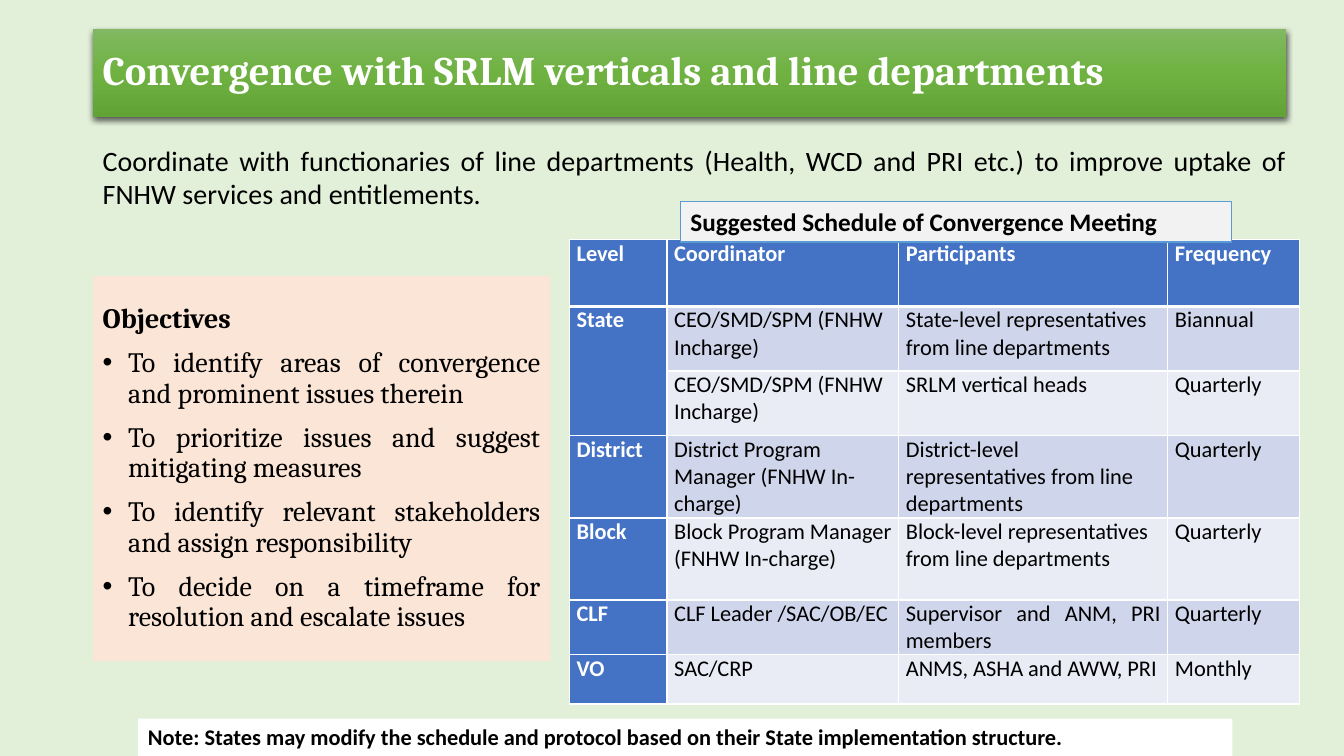
from lxml.etree import SubElement as Sub
from pptx import Presentation
from pptx.dml.color import RGBColor as RGB
from pptx.enum.shapes import MSO_SHAPE as SHAPE
from pptx.enum.text import MSO_ANCHOR as ANCHOR, PP_ALIGN as ALIGN
from pptx.oxml import parse_xml
from pptx.oxml.ns import nsdecls, qn
from pptx.util import Cm, Pt

MINT = RGB(0xE2, 0xF0, 0xD9)
PEACH = RGB(0xFB, 0xE5, 0xD6)
BLUE = RGB(0x44, 0x72, 0xC4)
SKY = RGB(0x5B, 0x9B, 0xD5)
BAND = RGB(0xCF, 0xD5, 0xEA)
PALE = RGB(0xE9, 0xEB, 0xF5)
GREY = RGB(0xF2, 0xF2, 0xF2)
WHITE = RGB(0xFF, 0xFF, 0xFF)
BLACK = RGB(0, 0, 0)
GREENS = ((0, "81B861"), (50, "6FB242"), (100, "62A336"))

TITLE = "Convergence with SRLM verticals and line departments"
INTRO = ("Coordinate with functionaries of line departments (Health, WCD and "
         "PRI etc.) to improve uptake of FNHW services and entitlements.")
NOTE = ("Note: States may modify the schedule and protocol based on their "
        "State implementation structure.")
GOALS = (
    "To identify areas of convergence and prominent issues therein",
    "To prioritize issues and suggest mitigating measures",
    "To identify relevant stakeholders and assign responsibility",
    "To decide on a timeframe for resolution and escalate issues",
)
ROWS = (
    ("Level", "Coordinator", "Participants", "Frequency"),
    ("State", "CEO/SMD/SPM (FNHW Incharge)",
     "State-level representatives from line departments", "Biannual"),
    ("", "CEO/SMD/SPM (FNHW Incharge)", "SRLM vertical heads", "Quarterly"),
    ("District", "District Program Manager (FNHW In-charge)",
     "District-level representatives from line departments", "Quarterly"),
    ("Block", "Block Program Manager (FNHW In-charge)",
     "Block-level representatives from line departments", "Quarterly"),
    ("CLF", "CLF Leader /SAC/OB/EC", "Supervisor and ANM, PRI members",
     "Quarterly"),
    ("VO", "SAC/CRP", "ANMS, ASHA and AWW, PRI", "Monthly"),
)
WIDTHS = (2.46, 5.84, 6.78, 3.32)
HEIGHTS = (1.68, 1.63, 1.63, 2.07, 2.07, 1.37, 1.24)


def style(para, size, color=BLACK, bold=False, face="Calibri", align=ALIGN.LEFT):
    para.alignment = align
    font = para.font
    font.name, font.size, font.bold = face, Pt(size), bold
    font.color.rgb = color


def add_rect(slide, box, fill, line=None):
    rect = slide.shapes.add_shape(SHAPE.RECTANGLE, *map(Cm, box))
    rect.shadow.inherit = False
    rect.fill.solid()
    rect.fill.fore_color.rgb = fill
    if line is None:
        rect.line.fill.background()
    else:
        rect.line.color.rgb = line
        rect.line.width = Pt(0.75)
    return rect


def add_text(shape, text, size, anchor=ANCHOR.TOP, **look):
    frame = shape.text_frame
    frame.word_wrap = True
    frame.vertical_anchor = anchor
    frame.text = text
    style(frame.paragraphs[0], size, **look)
    return frame


def add_title(slide, box):
    left, top, width, height = box
    # Green bar with gradient and shadow
    bar = slide.shapes.add_shape(SHAPE.RECTANGLE, *map(Cm, box))
    stops = "".join(f'<a:gs pos="{pos * 1000}"><a:srgbClr val="{color}"/></a:gs>'
                    for pos, color in GREENS)
    props = bar._element.spPr
    props.append(parse_xml(
        f'<a:gradFill {nsdecls("a")} rotWithShape="1"><a:gsLst>{stops}</a:gsLst>'
        '<a:lin ang="5400000" scaled="0"/></a:gradFill>'))
    bar.line.fill.background()
    props.append(parse_xml(
        f'<a:effectLst {nsdecls("a")}><a:outerShdw blurRad="{Pt(4.5)}" '
        f'dist="{Pt(1.5)}" dir="5400000" algn="ctr" rotWithShape="0">'
        '<a:srgbClr val="000000"><a:alpha val="63000"/></a:srgbClr>'
        '</a:outerShdw></a:effectLst>'))
    # Title text
    label = slide.shapes.add_textbox(Cm(left), Cm(top + 0.23), Cm(width + 0.66),
                                     Cm(height - 0.48))
    frame = add_text(label, TITLE, 29, ANCHOR.MIDDLE, color=WHITE, bold=True,
                     face="Cambria")
    frame.paragraphs[0].line_spacing = 0.9


def add_intro(slide, box):
    label = slide.shapes.add_textbox(*map(Cm, box))
    add_text(label, INTRO, 20, align=ALIGN.JUSTIFY)


def add_goals(slide, box):
    panel = add_rect(slide, box, PEACH)
    look = dict(face="Cambria", align=ALIGN.JUSTIFY)
    frame = add_text(panel, "Objectives", 20, ANCHOR.MIDDLE, bold=True, **look)
    frame.paragraphs[0].line_spacing = 0.9
    for goal in GOALS:
        para = frame.add_paragraph()
        para.text = goal
        props = para._p.get_or_add_pPr()
        props.set("marL", str(Cm(0.64)))
        props.set("indent", str(-Cm(0.64)))
        Sub(props, qn("a:buFont"), typeface="Arial")
        Sub(props, qn("a:buChar"), char="•")
        para.line_spacing = 0.9
        para.space_before = Pt(10)
        style(para, 20, **look)


def add_edges(cell, head):
    props = cell._tc.get_or_add_tcPr()
    for at, side in enumerate(("lnL", "lnR", "lnT", "lnB")):
        width = Pt(3 if head and side == "lnB" else 1)
        props.insert(at, parse_xml(
            f'<a:{side} {nsdecls("a")} w="{width}"><a:solidFill>'
            f'<a:srgbClr val="{WHITE}"/></a:solidFill></a:{side}>'))


def add_plan(slide, box):
    left, top, width, height = box
    # Meeting table
    grid = slide.shapes.add_table(len(ROWS), len(WIDTHS), *map(Cm, box)).table
    for col, size in zip(grid.columns, WIDTHS):
        col.width = Cm(size)
    for row, size in zip(grid.rows, HEIGHTS):
        row.height = Cm(size)
    for r, texts in enumerate(ROWS):
        for c, text in enumerate(texts):
            cell = grid.cell(r, c)
            head = r == 0 or c == 0
            cell.text = text
            cell.margin_left = cell.margin_right = Cm(0.18)
            cell.margin_top = cell.margin_bottom = 0
            cell.fill.solid()
            cell.fill.fore_color.rgb = BLUE if head else BAND if r % 2 else PALE
            style(cell.text_frame.paragraphs[0], 16, WHITE if head else BLACK,
                  head, align=ALIGN.JUSTIFY if head or r > 4 else ALIGN.LEFT)
            add_edges(cell, r == 0)
    grid.cell(1, 0).merge(grid.cell(2, 0))
    # Caption over the table's top edge
    tag = add_rect(slide, (left + 2.8, top - 0.96, 13.89, 1.02), GREY, SKY)
    add_text(tag, "Suggested Schedule of Convergence Meeting", 18, bold=True)


def add_note(slide, box):
    add_text(add_rect(slide, box, WHITE), NOTE, 16, bold=True)


def main():
    deck = Presentation()
    deck.slide_width, deck.slide_height = Cm(33.87), Cm(19.05)
    slide = deck.slides.add_slide(deck.slide_layouts[6])
    back = slide.background.fill
    back.solid()
    back.fore_color.rgb = MINT
    add_plan(slide, (14.35, 6.04, sum(WIDTHS), sum(HEIGHTS)))
    add_goals(slide, (2.34, 6.96, 11.53, 9.7))
    add_intro(slide, (2.34, 3.48, 30.33, 1.96))
    add_note(slide, (3.48, 18.11, 27.58, 0.94))
    add_title(slide, (2.34, 0.74, 30.07, 2.21))
    deck.save("out.pptx")


if __name__ == "__main__":
    main()
